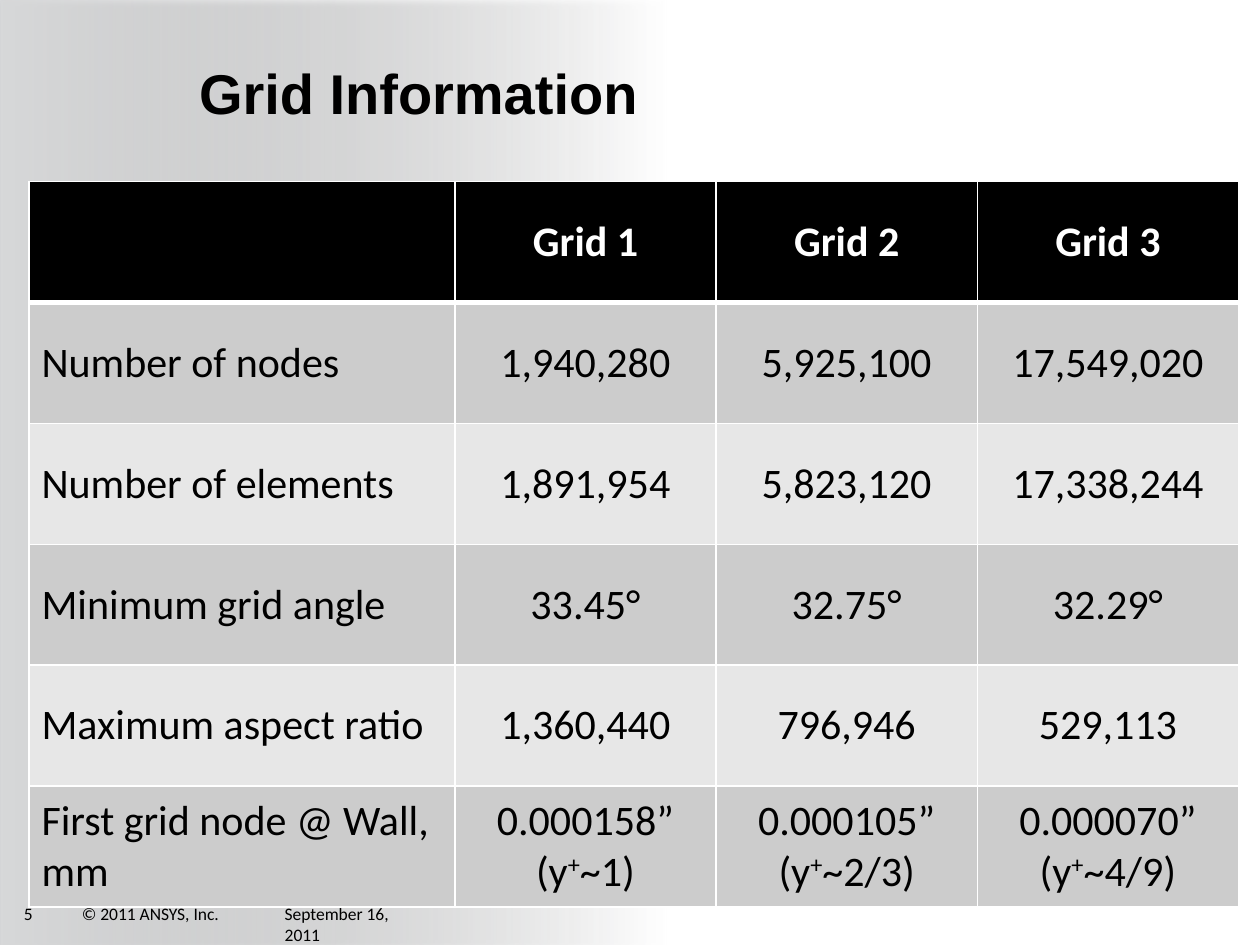
from lxml.etree import SubElement
from pptx import Presentation
from pptx.dml.color import RGBColor
from pptx.enum.shapes import MSO_SHAPE
from pptx.enum.text import MSO_ANCHOR, PP_ALIGN
from pptx.oxml.ns import qn
from pptx.util import Inches, Pt

BLACK, WHITE = "000000", "FFFFFF"
BANDS = ["CCCCCC", "E7E7E7"]
HAZE = "D7D8D9"

HEADS = ["", "Grid 1", "Grid 2", "Grid 3"]
ROWS = [
    ["Number of nodes", "1,940,280", "5,925,100", "17,549,020"],
    ["Number of elements", "1,891,954", "5,823,120", "17,338,244"],
    ["Minimum grid angle", "33.45°", "32.75°", "32.29°"],
    ["Maximum aspect ratio", "1,360,440", "796,946", "529,113"],
]
# Wall spacing and its y+ value for each grid
WALL = [("0.000158”", "1"), ("0.000105”", "2/3"), ("0.000070”", "4/9")]


def color(code):
    return RGBColor.from_string(code)


def add_run(para, text, size, font="Calibri", code=BLACK, bold=False, raised=False):
    run = para.add_run()
    run.text = text
    run.font.size = Pt(size)
    run.font.name = font
    run.font.bold = bold
    run.font.color.rgb = color(code)
    if raised:
        run.font._element.set("baseline", "30000")


def add_label(slide, box, text, size, **style):
    shape = slide.shapes.add_textbox(*map(Inches, box))
    frame = shape.text_frame
    frame.word_wrap = True
    frame.margin_left = frame.margin_right = 0
    frame.margin_top = frame.margin_bottom = 0
    add_run(frame.paragraphs[0], text, size, **style)
    return frame


def add_haze(slide, box):
    """Grey wash that fades out to the right, with a soft shadow."""
    shape = slide.shapes.add_shape(MSO_SHAPE.RECTANGLE, *map(Inches, box))
    shape.shadow.inherit = False
    shape.line.fill.background()
    shape.fill.gradient()
    shape.fill.gradient_angle = 0
    for stop, place in zip(shape.fill.gradient_stops, (0, 0.53)):
        stop.color.rgb = color(HAZE)
        stop.position = place
    props = shape._element.spPr
    last = props.findall(".//" + qn("a:srgbClr"))[-1]
    SubElement(last, qn("a:alpha"), val="0")
    shadow = SubElement(props.find(qn("a:effectLst")), qn("a:outerShdw"),
                        blurRad=str(Pt(3.1)), dist=str(Pt(1.8)),
                        dir="5400000", rotWithShape="0")
    tint = SubElement(shadow, qn("a:srgbClr"), val=BLACK)
    SubElement(tint, qn("a:alpha"), val="35000")


def add_title(slide, box):
    frame = add_label(slide, box, "Grid Information", 32, font="Arial", bold=True)
    frame.vertical_anchor = MSO_ANCHOR.MIDDLE
    frame.paragraphs[0].line_spacing = 0.9


def add_footer(slide, box):
    left, top, width, height = box
    parts = [(0, 0.31, "5"), (0.46, 1.62, "© 2011 ANSYS, Inc."),
             (2.07, 1.1, "September 16, 2011")]
    for shift, wide, text in parts:
        add_label(slide, (left + shift, top, wide, height), text, 10)


def set_edges(cell, widths):
    props = cell._tc.get_or_add_tcPr()
    for side, width in zip("LRTB", widths):
        line = SubElement(props, qn("a:ln" + side), w=str(Pt(width)))
        fill = SubElement(line, qn("a:solidFill"))
        SubElement(fill, qn("a:srgbClr"), val=WHITE)


def fill_cell(cell, lines, row, col):
    """Each line is a list of (text, raised) pieces."""
    head = row == 0
    set_edges(cell, (1, 1, 3 if row == 1 else 1, 3 if head else 1))
    cell.fill.solid()
    cell.fill.fore_color.rgb = color(BLACK if head else BANDS[(row - 1) % 2])
    cell.vertical_anchor = MSO_ANCHOR.MIDDLE
    frame = cell.text_frame
    for i, line in enumerate(lines):
        para = frame.add_paragraph() if i else frame.paragraphs[0]
        para.alignment = PP_ALIGN.CENTER if col else PP_ALIGN.LEFT
        for text, raised in line:
            if text:
                add_run(para, text, 24, code=WHITE if head else BLACK,
                        bold=head, raised=raised)


def add_grid(slide, box):
    rows = [[[[(text, False)]] for text in row] for row in [HEADS] + ROWS]
    rows.append([[[("First grid node @ Wall, mm", False)]]] + [
        [[(size, False)], [("(y", False), ("+", True), (f"~{ratio})", False)]]
        for size, ratio in WALL])
    left, top, width, height = box
    table = slide.shapes.add_table(len(rows), len(HEADS), *map(Inches, box)).table
    first = 3.38
    for c, column in enumerate(table.columns):
        wide = (width - first) / (len(HEADS) - 1) if c else first
        column.width = Inches(wide)
    for r, row in enumerate(rows):
        table.rows[r].height = Inches(height / len(rows))
        for c, lines in enumerate(row):
            fill_cell(table.cell(r, c), lines, r, c)


def main():
    deck = Presentation()
    deck.slide_width, deck.slide_height = Inches(10), Inches(7.5)
    slide = deck.slides.add_slide(deck.slide_layouts[6])
    add_haze(slide, (0, 0, 10, 7.5))
    add_footer(slide, (0.19, 7.17, 3.17, 0.17))
    add_title(slide, (1.58, 0.5, 7.79, 0.53))
    add_grid(slide, (0.23, 1.44, 9.6, 5.76))
    deck.save("out.pptx")


if __name__ == "__main__":
    main()
